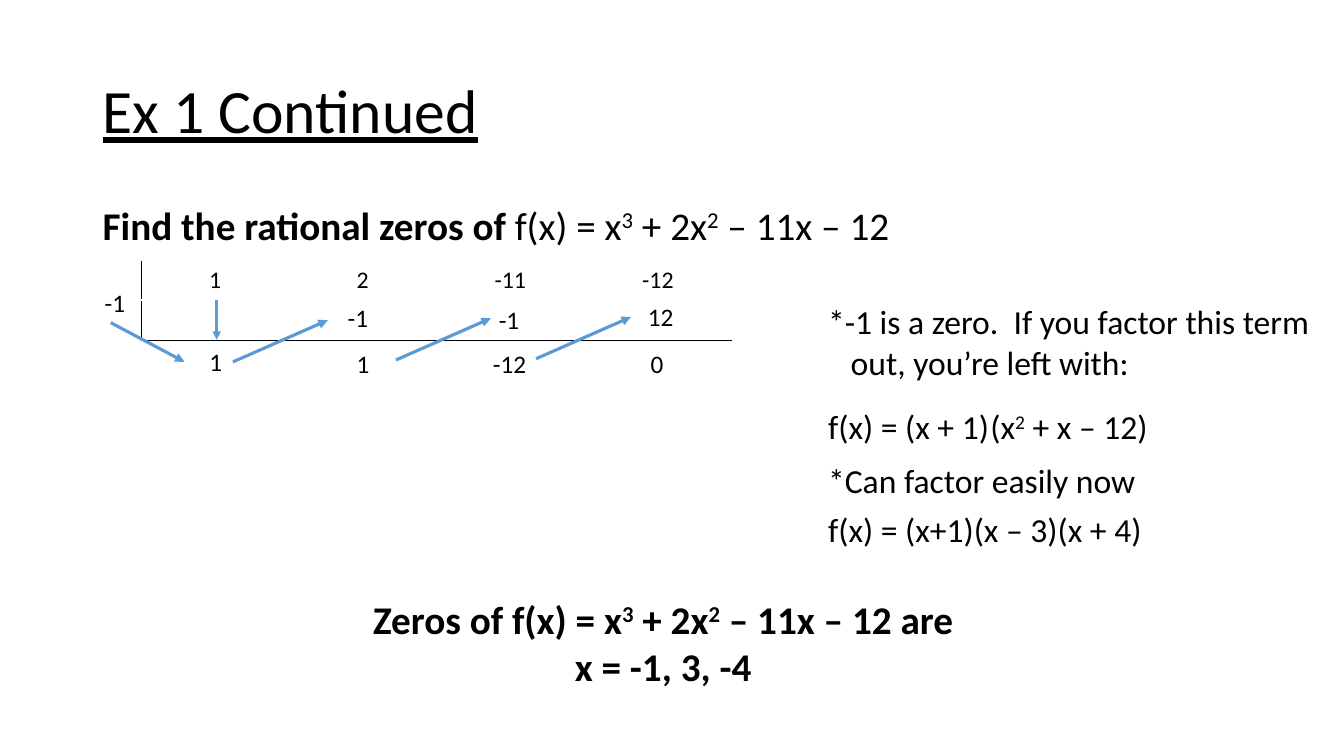
import pptx
import pptx.dml.color
import pptx.enum.shapes
import pptx.enum.text
import pptx.oxml
import pptx.oxml.ns
import pptx.util
from pptx.util import Cm

BLACK = pptx.dml.color.RGBColor(0x00, 0x00, 0x00)
ARROW_BLUE = pptx.dml.color.RGBColor(0x5B, 0x9B, 0xD5)
FONT = "Calibri"
ALIGN = pptx.enum.text.PP_ALIGN
ANCHOR = pptx.enum.text.MSO_ANCHOR
POLYNOMIAL = "f(x) = x^3^ + 2x^2^ – 11x – 12"
COEFFICIENTS = ["1", "2", "-11", "-12"]


def write_text(frame, text, size, lead="", bold=False, underline=False,
               align=ALIGN.LEFT, spacing=None, later_indent=None):
    for index, line in enumerate(text.split("\n")):
        paragraph = frame.paragraphs[0] if index == 0 else frame.add_paragraph()
        paragraph.alignment = align
        if spacing:
            paragraph.line_spacing = spacing
        if index and later_indent:
            paragraph._p.get_or_add_pPr().set("marL", str(later_indent))
        pieces = [(part, bold, position % 2 == 1)
                  for position, part in enumerate(line.split("^"))]
        if index == 0 and lead:
            pieces.insert(0, (lead, True, False))
        for part, heavy, raised in pieces:
            run = paragraph.add_run()
            run.text = part
            run.font.name = FONT
            run.font.size = pptx.util.Pt(size)
            run.font.color.rgb = BLACK
            run.font.bold = heavy
            run.font.underline = underline
            if raised:
                run._r.get_or_add_rPr().set("baseline", "30000")


def add_text(slide, left, top, width, height, text, size,
             wrap=False, anchor=ANCHOR.TOP, **text_format):
    box = slide.shapes.add_textbox(Cm(left), Cm(top), Cm(width), Cm(height))
    frame = box.text_frame
    frame.word_wrap = wrap
    frame.vertical_anchor = anchor
    if not wrap:
        frame.auto_size = pptx.enum.text.MSO_AUTO_SIZE.SHAPE_TO_FIT_TEXT
    write_text(frame, text, size, **text_format)


def add_arrow(slide, start_x, start_y, end_x, end_y, weight=2.25):
    arrow = slide.shapes.add_connector(
        pptx.enum.shapes.MSO_CONNECTOR.STRAIGHT,
        Cm(start_x), Cm(start_y), Cm(end_x), Cm(end_y))
    arrow.line.color.rgb = ARROW_BLUE
    arrow.line.width = pptx.util.Pt(weight)
    head = pptx.oxml.parse_xml(
        f'<a:tailEnd {pptx.oxml.ns.nsdecls("a")} type="triangle"/>')
    arrow.line._get_or_add_ln().append(head)
    arrow._element.spPr.append(pptx.oxml.parse_xml(
        f'<a:effectLst {pptx.oxml.ns.nsdecls("a")}/>'))


def add_border(cell, side):
    border = pptx.oxml.parse_xml(
        f'<a:ln{side} {pptx.oxml.ns.nsdecls("a")} w="12700"><a:solidFill>'
        f'<a:srgbClr val="{BLACK}"/></a:solidFill></a:ln{side}>')
    cell._tc.get_or_add_tcPr().insert(0, border)


def add_division_table(slide):
    column_width, row_heights = 3.72, [0.98, 1.02]
    table = slide.shapes.add_table(
        2, len(COEFFICIENTS), Cm(3.56), Cm(6.58),
        Cm(column_width * len(COEFFICIENTS)), Cm(sum(row_heights))).table
    table.first_row = False
    table.horz_banding = False
    for row, height in zip(table.rows, row_heights):
        row.height = Cm(height)
    for index, coefficient in enumerate(COEFFICIENTS):
        table.columns[index].width = Cm(column_width)
        top_cell, bottom_cell = table.cell(0, index), table.cell(1, index)
        for cell in (top_cell, bottom_cell):
            cell.fill.background()
        write_text(top_cell.text_frame, coefficient, 17, align=ALIGN.CENTER)
        add_border(bottom_cell, "B")
        if index == 0:
            add_border(top_cell, "L")
            add_border(bottom_cell, "L")


def add_division_steps(slide):
    steps = [
        (2.39, 7.11, 1.04, "-1"), (5.03, 8.59, 0.84, "1"),
        (8.51, 7.49, 1.04, "-1"), (8.74, 8.66, 0.84, "1"),
        (12.32, 7.54, 1.04, "-1"), (12.17, 8.66, 1.37, "-12"),
        (16.08, 7.47, 1.17, "12"), (16.15, 8.66, 0.84, "0"),
    ]
    for left, top, width, number in steps:
        add_text(slide, left, top, width, 1.02, number, 18)
    add_arrow(slide, 5.46, 7.57, 5.46, 8.56, weight=2)
    add_arrow(slide, 2.79, 8.13, 4.65, 9.12)
    for start_x, start_y in [(5.87, 9.12), (9.98, 9.07), (13.51, 9.04)]:
        add_arrow(slide, start_x, start_y, start_x + 2.39, start_y - 1.05)


def add_factoring_notes(slide):
    left = 20.62
    add_text(slide, left, 7.47, 12.73, 2.31,
             "*-1 is a zero.  If you factor this term\nout, you’re left with:",
             24, later_indent=Cm(0.57))
    notes = [
        (left, 10.11, 4.6, "f(x) = (x + 1)"),
        (24.71, 10.11, 4.55, "(x^2^ + x – 12)"),
        (left, 11.46, 8.33, "*Can factor easily now"),
        (left, 12.7, 8.48, "f(x) = (x+1)(x – 3)(x + 4)"),
    ]
    for note_left, top, width, note in notes:
        add_text(slide, note_left, top, width, 1.27, note, 24)


def main():
    presentation = pptx.Presentation()
    presentation.slide_width = Cm(33.87)
    presentation.slide_height = Cm(19.05)
    slide = presentation.slides.add_slide(presentation.slide_layouts[6])
    add_text(slide, 2.34, 1.02, 29.21, 3.68, "Ex 1 Continued", 44, wrap=True,
             anchor=ANCHOR.MIDDLE, underline=True, spacing=0.9)
    add_text(slide, 2.34, 5.08, 29.21, 1.4, POLYNOMIAL, 28, wrap=True,
             lead="Find the rational zeros of ", spacing=0.9)
    add_division_table(slide)
    add_division_steps(slide)
    add_factoring_notes(slide)
    add_text(slide, 9.14, 14.88, 15.14, 2.64,
             f"Zeros of {POLYNOMIAL} are\nx = -1, 3, -4", 28,
             bold=True, align=ALIGN.CENTER)
    presentation.save("out.pptx")


if __name__ == "__main__":
    main()
